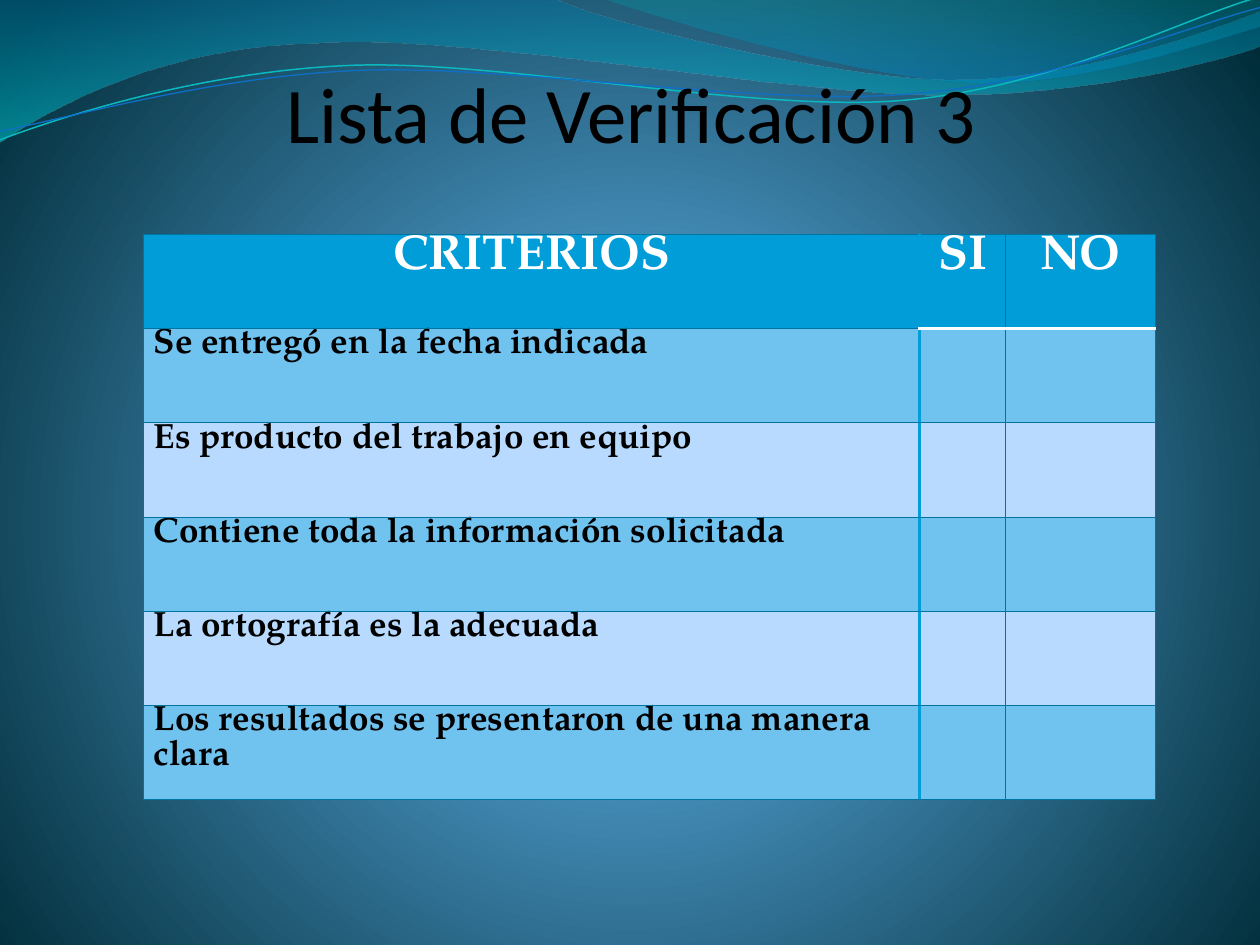
from dataclasses import dataclass
from typing import Optional

from lxml.etree import SubElement
from pptx import Presentation
from pptx.dml.color import RGBColor
from pptx.enum.text import MSO_ANCHOR, PP_ALIGN
from pptx.oxml.ns import qn
from pptx.util import Inches, Pt

BLACK = RGBColor(0x00, 0x00, 0x00)
WHITE = RGBColor(0xFF, 0xFF, 0xFF)
HEADER_BLUE = RGBColor(0x00, 0x9D, 0xD9)
BAND_DARK = RGBColor(0x70, 0xC2, 0xEF)
BAND_LIGHT = RGBColor(0xB8, 0xDA, 0xFE)
GRID_BLUE = RGBColor(0x00, 0x74, 0xA1)
TEAL = RGBColor(0x00, 0xC6, 0xCF)
GREEN = RGBColor(0x00, 0xA1, 0xA9)
DEEP_BLUE = RGBColor(0x00, 0x8B, 0xBF)
CYAN_LINE = RGBColor(0x0A, 0xB8, 0xBF)
BLUE_LINE = RGBColor(0x0F, 0x6F, 0xC6)
SKY = RGBColor(0x4A, 0xA0, 0xD6)
SKY_MIDDLE = RGBColor(0x4C, 0x98, 0xC7)
NIGHT = RGBColor(0x00, 0x2C, 0x38)

COLUMN_WIDTHS = (6.16, 0.68, 1.19)
TABLE_HEIGHT = 4.49
HEADINGS = ("CRITERIOS", "SI", "NO")
CRITERIA = (
    "Se entregó en la fecha indicada",
    "Es producto del trabajo en equipo",
    "Contiene toda la información solicitada",
    "La ortografía es la adecuada",
    "Los resultados se presentaron de una manera clara",
)


@dataclass(frozen=True)
class Stop:
    position: int
    color: RGBColor
    opacity: int = 100


@dataclass(frozen=True)
class Wave:
    start: tuple
    segments: tuple
    stops: tuple = ()
    line: Optional[RGBColor] = None
    width: float = 0


WAVES = (
    Wave((0, 0), (
        ((4.4, -0.01),),
        ((4.76, 0.17), (6.64, 0.63), (7.58, 0.63)),
        ((8.53, 0.63), (9.58, 0.26), (10, 0.09)),
        ((10.01, 0.36),),
        ((9.83, 0.44), (8.7, 0.76), (7.46, 0.75)),
        ((6.22, 0.75), (3.82, 0.28), (2.57, 0.34)),
        ((1.29, 0.36), (0.46, 0.83), (-0.01, 1.13)),
    ), stops=(Stop(0, GRID_BLUE, 45), Stop(100, TEAL, 55))),
    Wave((4.79, -0.01), (
        ((5.09, 0.11), (6.82, 0.62), (7.69, 0.65)),
        ((8.56, 0.69), (9.61, 0.32), (10, 0.21)),
        ((10, 0),),
    ), stops=(Stop(0, GREEN, 30), Stop(80, DEEP_BLUE, 45))),
    Wave((0, 1.11), (
        ((0.48, 0.93), (1.58, 0.57), (2.77, 0.52)),
        ((3.95, 0.47), (5.93, 0.89), (7.13, 0.8)),
        ((8.33, 0.71), (9.38, 0.15), (9.98, -0.02)),
    ), line=CYAN_LINE, width=0.85),
    Wave((0, 1.04), (
        ((0.47, 0.96), (1.64, 0.61), (2.83, 0.56)),
        ((4.03, 0.51), (5.97, 0.84), (7.17, 0.75)),
        ((8.36, 0.67), (9.41, 0.21), (10, 0.06)),
    ), line=BLUE_LINE, width=0.75),
)


def apply_format(target, values: dict) -> None:
    for name, value in values.items():
        setattr(target, name, value)


def add_color(parent, color: RGBColor, opacity: int = 100) -> None:
    node = SubElement(parent, qn("a:srgbClr"), val=str(color))
    if opacity < 100:
        SubElement(node, qn("a:alpha"), val=str(opacity * 1000))


def set_gradient(fill, element, stops: tuple, center: Optional[dict] = None) -> None:
    fill.gradient()
    gradient = next(element.iter(qn("a:gradFill")))
    for child in list(gradient):
        gradient.remove(child)
    stop_list = SubElement(gradient, qn("a:gsLst"))
    for stop in stops:
        node = SubElement(stop_list, qn("a:gs"), pos=str(stop.position * 1000))
        add_color(node, stop.color, stop.opacity)
    if center:
        circle = SubElement(gradient, qn("a:path"), path="circle")
        SubElement(circle, qn("a:fillToRect"),
                   {side: str(percent * 1000) for side, percent in center.items()})
    else:
        SubElement(gradient, qn("a:lin"), ang="5400000", scaled="1")


def bend(shape, segments: tuple) -> None:
    outline = next(shape.element.iter(qn("a:path")))
    corners = iter(outline.findall(qn("a:lnTo")))
    for segment in segments:
        steps = [next(corners) for _ in segment]
        if len(steps) == 3:
            curve = SubElement(outline, qn("a:cubicBezTo"))
            outline.replace(steps[0], curve)
            for step in steps:
                curve.append(step[0])
            for step in steps[1:]:
                outline.remove(step)


def draw_wave(page, wave: Wave) -> None:
    builder = page.shapes.build_freeform(*map(Inches, wave.start))
    points = [tuple(map(Inches, point)) for segment in wave.segments for point in segment]
    builder.add_line_segments(points, close=bool(wave.stops))
    shape = builder.convert_to_shape()
    bend(shape, wave.segments)
    shape.shadow.inherit = False
    if wave.stops:
        set_gradient(shape.fill, shape.element, wave.stops)
        shape.line.fill.background()
    else:
        shape.fill.background()
        shape.line.color.rgb = wave.line
        shape.line.width = Pt(wave.width)


def write(para, text: str, font: str, size: float, color: RGBColor, bold: bool) -> None:
    span = para.add_run()
    span.text = text
    apply_format(span.font, {"name": font, "size": Pt(size), "bold": bold})
    span.font.color.rgb = color


def draw_title(page) -> None:
    box = page.shapes.add_textbox(Inches(0.51), Inches(0.92), Inches(9), Inches(1.1))
    apply_format(box.text_frame, {
        "word_wrap": True, "vertical_anchor": MSO_ANCHOR.BOTTOM, "margin_left": 0,
        "margin_right": 0, "margin_top": 0, "margin_bottom": Inches(0.76)})
    para = box.text_frame.paragraphs[0]
    para.alignment = PP_ALIGN.CENTER
    write(para, "Lista de Verificación 3", "Calibri", 45, BLACK, False)


def cell_edges(row: int, column: int) -> dict:
    grid, divider, rule = (GRID_BLUE, 0.75), (HEADER_BLUE, 2), (WHITE, 2)
    return {
        "L": divider if column == 1 else grid,
        "R": divider if column == 0 else grid,
        "T": rule if row == 1 and column else grid,
        "B": rule if row == 0 and column else grid,
    }


def set_borders(cell, edges: dict) -> None:
    properties = cell._tc.get_or_add_tcPr()
    for index, (side, (color, width)) in enumerate(edges.items()):
        line = SubElement(properties, qn(f"a:ln{side}"), w=str(Pt(width)))
        add_color(SubElement(line, qn("a:solidFill")), color)
        properties.insert(index, line)


def draw_table(page) -> None:
    rows = (HEADINGS, *((text, "", "") for text in CRITERIA))
    table = page.shapes.add_table(
        len(rows), len(HEADINGS), Inches(1.14), Inches(1.86),
        Inches(sum(COLUMN_WIDTHS)), Inches(TABLE_HEIGHT)).table
    for column, width in zip(table.columns, COLUMN_WIDTHS):
        column.width = Inches(width)
    for row, texts in enumerate(rows):
        band = BAND_DARK if row % 2 else BAND_LIGHT
        for column, text in enumerate(texts):
            cell = table.cell(row, column)
            apply_format(cell, {"margin_left": Inches(0.08), "margin_right": Inches(0.08),
                                "margin_top": 0, "margin_bottom": 0})
            cell.fill.solid()
            cell.fill.fore_color.rgb = band if row else HEADER_BLUE
            set_borders(cell, cell_edges(row, column))
            if text:
                para = cell.text_frame.paragraphs[0]
                para.alignment = PP_ALIGN.LEFT if row else PP_ALIGN.CENTER
                write(para, text, "TeX Gyre Pagella", 20 if row else 28,
                      BLACK if row else WHITE, True)


def main() -> None:
    """Build the verification checklist slide."""
    deck = Presentation()
    apply_format(deck, {"slide_width": Inches(10), "slide_height": Inches(7.5)})
    page = deck.slides.add_slide(deck.slide_layouts[6])
    set_gradient(page.background.fill, page.element,
                 (Stop(0, SKY), Stop(25, SKY_MIDDLE), Stop(100, NIGHT)),
                 {"l": 10, "t": 110, "r": 10, "b": 100})
    for wave in WAVES:
        draw_wave(page, wave)
    draw_title(page)
    draw_table(page)
    deck.save("out.pptx")


if __name__ == "__main__":
    main()
